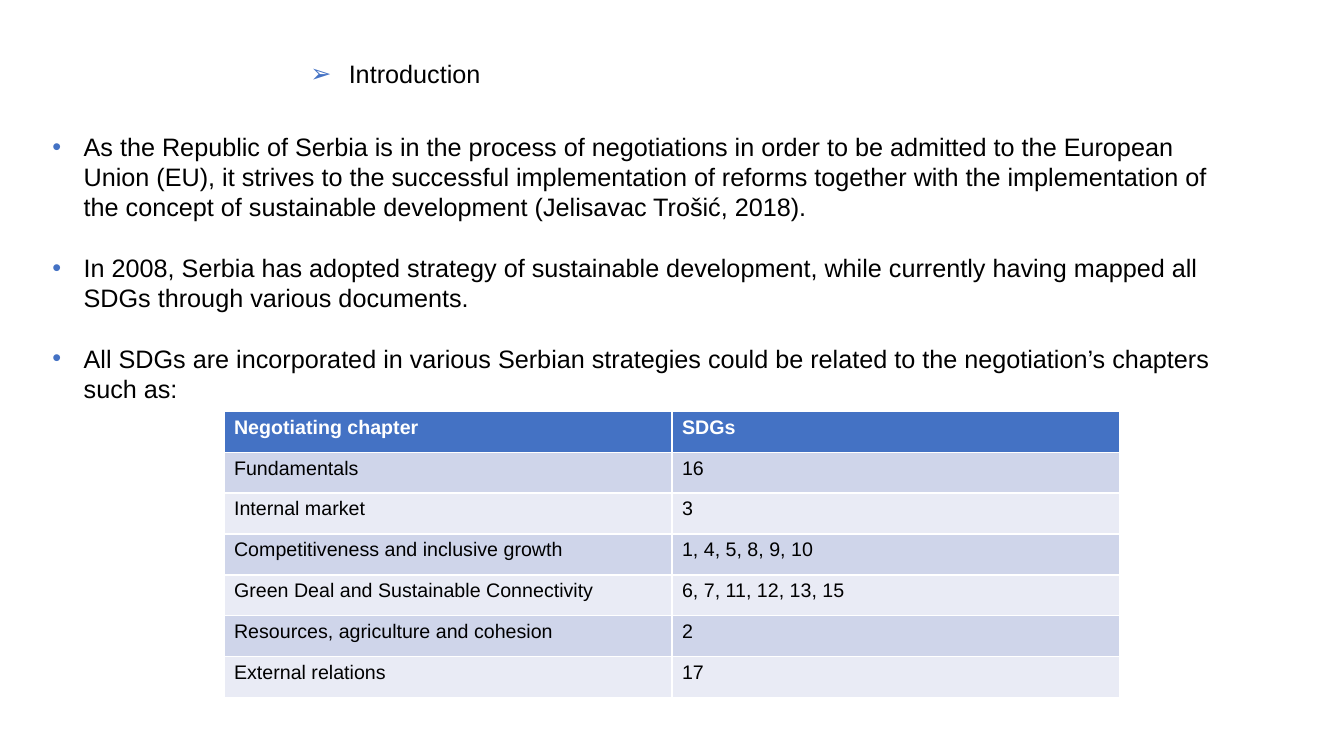
from lxml import etree
from pptx import Presentation
from pptx.dml.color import RGBColor
from pptx.enum.text import MSO_ANCHOR, MSO_AUTO_SIZE, PP_ALIGN
from pptx.oxml.ns import qn
from pptx.util import Inches, Pt

TOP, MIDDLE = MSO_ANCHOR.TOP, MSO_ANCHOR.MIDDLE
FIXED = MSO_AUTO_SIZE.NONE
LEFT = PP_ALIGN.LEFT

WIDE, HIGH = 13.33, 7.5
FONT = "Arial"
LINE = Pt(21.6)
COLORS = {
    "ink": "000000",
    "blue": "4472C4",
    "white": "FFFFFF",
    "odd": "CFD5EA",
    "even": "E9EBF5",
}

POINTS = [
    "As the Republic of Serbia is in the process of negotiations in order to be "
    "admitted to the European Union (EU), it strives to the successful "
    "implementation of reforms together with the implementation of the concept "
    "of sustainable development (Jelisavac Trošić, 2018).",
    "In 2008, Serbia has adopted strategy of sustainable development, while "
    "currently having mapped all SDGs through various documents.",
    "All SDGs are incorporated in various Serbian strategies could be related to "
    "the negotiation’s chapters such as:",
]

CHAPTERS = [
    ("Negotiating chapter", "SDGs"),
    ("Fundamentals", "16"),
    ("Internal market", "3"),
    ("Competitiveness and inclusive growth", "1, 4, 5, 8, 9, 10"),
    ("Green Deal and Sustainable Connectivity", "6, 7, 11, 12, 13, 15"),
    ("Resources, agriculture and cohesion", "2"),
    ("External relations", "17"),
]


def paint(name):
    return RGBColor.from_string(COLORS[name])


def area(left, top, width, height):
    return (Inches(left * WIDE), Inches(top * HIGH),
            Inches(width * WIDE), Inches(height * HIGH))


def style(para, size, color="ink", bold=False):
    font = para.font
    font.name, font.size, font.bold = FONT, Pt(size), bold
    font.color.rgb = paint(color)


def bullet(para, mark, indent):
    props = para._p.get_or_add_pPr()
    props.set("marL", str(Inches(indent)))
    props.set("indent", str(-Inches(indent)))
    tint = etree.SubElement(props, qn("a:buClr"))
    etree.SubElement(tint, qn("a:srgbClr"), val=COLORS["blue"])
    etree.SubElement(props, qn("a:buFont"), typeface=FONT)
    etree.SubElement(props, qn("a:buChar"), char=mark)


def fill_list(holder, box, texts, mark, indent, line, anchor):
    holder.left, holder.top, holder.width, holder.height = box
    frame = holder.text_frame
    frame.word_wrap, frame.auto_size = True, FIXED
    frame.vertical_anchor = anchor
    frame.text = "\n".join(texts)
    for i, para in enumerate(frame.paragraphs):
        para.alignment = LEFT
        para.line_spacing = line
        para.space_before = LINE if i else Pt(0)
        bullet(para, mark, indent)
        style(para, 18)
    return frame


def add_grid(slide, box, rows):
    table = slide.shapes.add_table(len(rows), len(rows[0]), *box).table
    for r, row in enumerate(rows):
        shade = ("odd" if r % 2 else "even") if r else "blue"
        for c, text in enumerate(row):
            cell = table.cell(r, c)
            cell.fill.solid()
            cell.fill.fore_color.rgb = paint(shade)
            cell.text = text
            style(cell.text_frame.paragraphs[0], 14,
                  "ink" if r else "white", bold=r == 0)


def main():
    deck = Presentation()
    deck.slide_width, deck.slide_height = Inches(WIDE), Inches(HIGH)
    slide = deck.slides.add_slide(deck.slide_layouts[1])
    title, body = slide.placeholders
    head = fill_list(title, area(0.231, 0.071, 0.233, 0.056),
                     ["Introduction"], "➢", 0.38, 0.9, MIDDLE)
    head.margin_left = head.margin_right = 0
    head.margin_top = head.margin_bottom = 0
    fill_list(body, area(0.0315, 0.167, 0.895, 0.377),
              POINTS, "•", 0.31, LINE, TOP)
    add_grid(slide, area(1 / 6, 0.544, 2 / 3, 0.379), CHAPTERS)
    deck.save("out.pptx")


if __name__ == "__main__":
    main()
